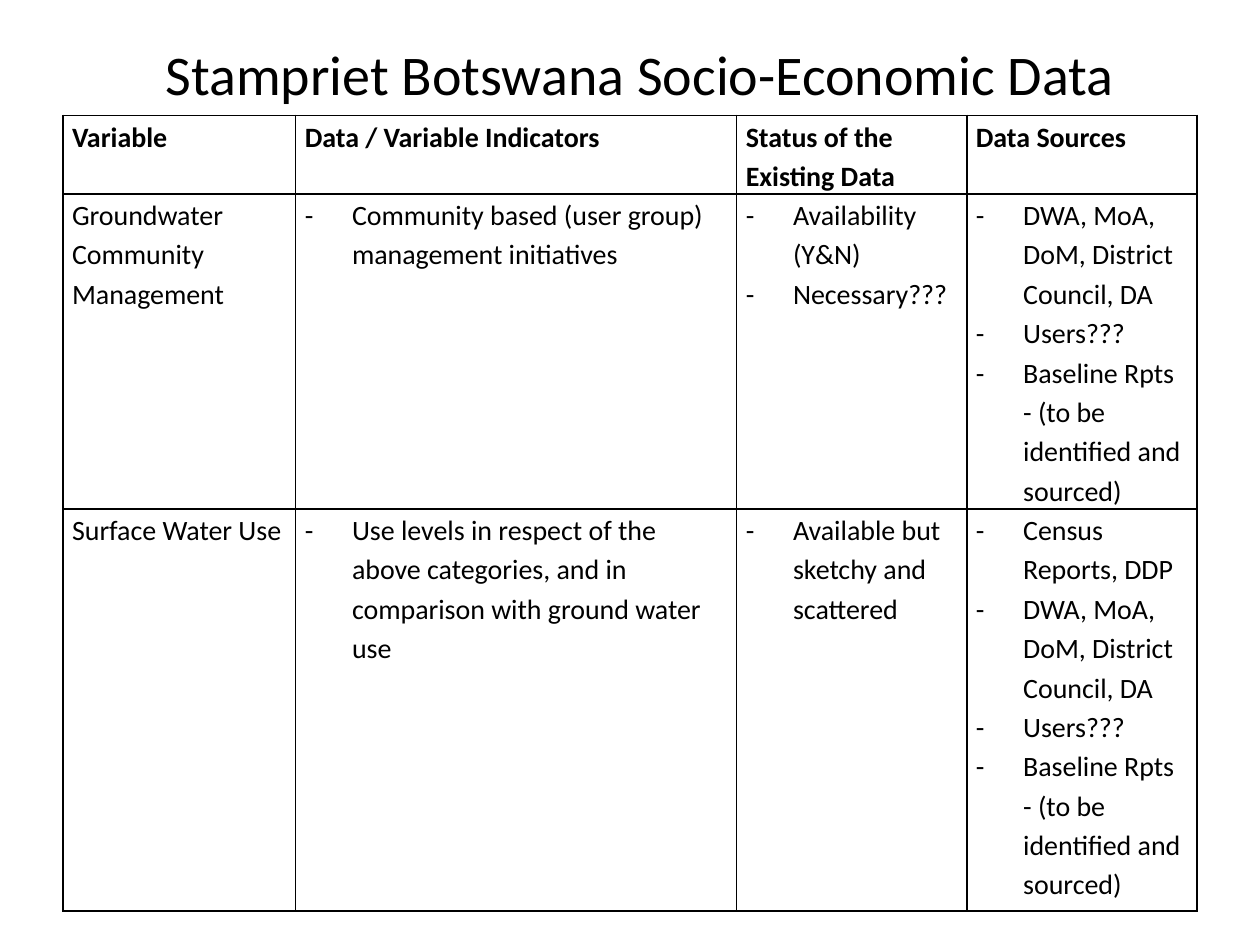
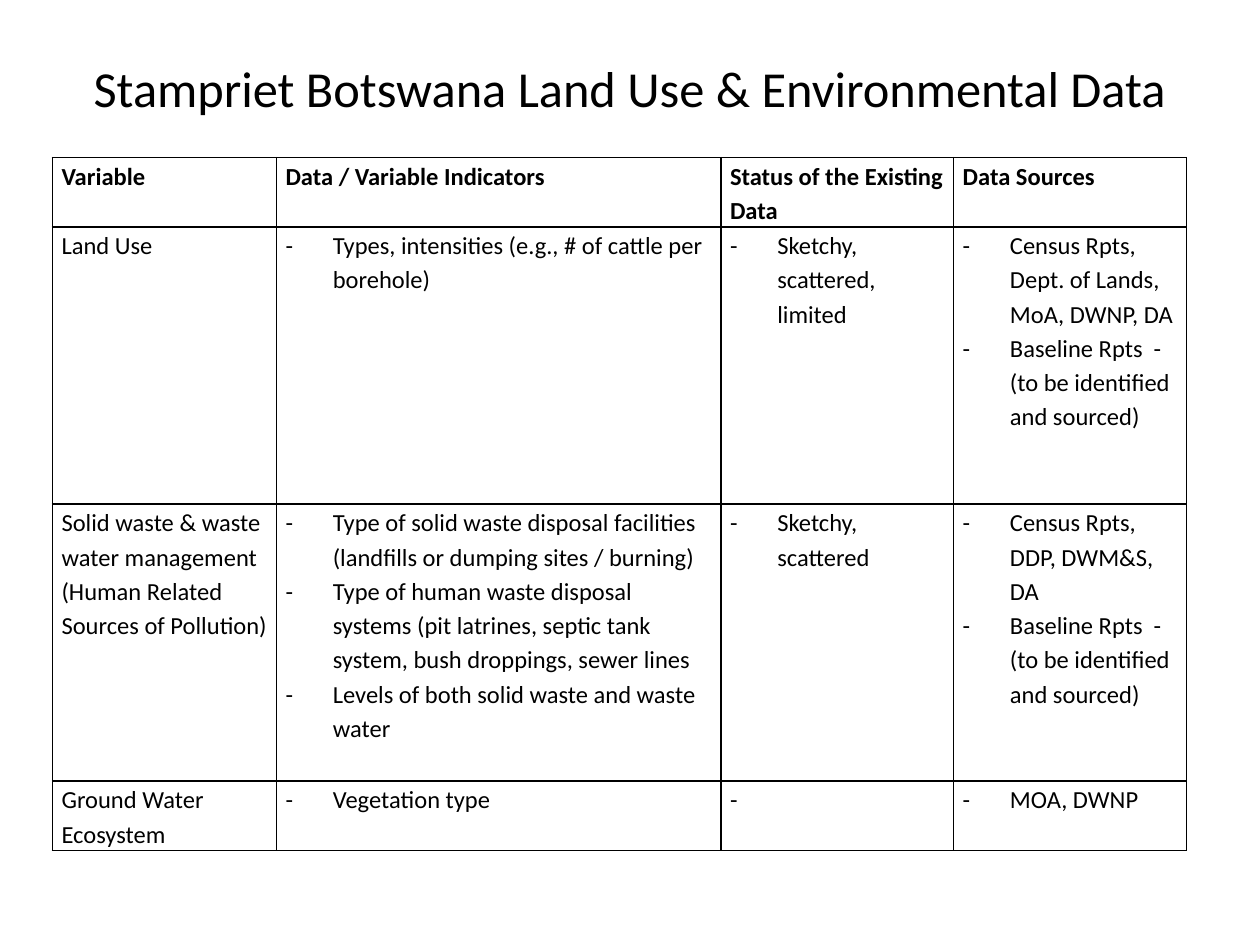
from lxml import etree
from pptx import Presentation
from pptx.dml.color import RGBColor
from pptx.enum.text import MSO_ANCHOR as Anchor, PP_ALIGN as Align
from pptx.oxml.ns import qn
from pptx.util import Pt

COLORS = {"text": "000000", "border": "000000"}
FONT = "Calibri"
BASELINE = "Baseline Rpts  - (to be identified and sourced)"
COUNCIL = "DWA, MoA, DoM, District Council, DA"
HEADER = ["Variable", "Data / Variable Indicators",
          "Status of the Existing Data", "Data Sources"]

SLIDES = [
    dict(
        title="Stampriet Botswana Socio-Economic Data",
        title_box=(41.8, 11.8, 648, 59.8), title_size=32,
        table_box=(36, 66, 648, 454.5), size=16,
        cols=[133, 252, 131.5, 131.5], heights=[44.8, 180, 229.7],
        rows=[
            [["Groundwater Community Management"],
             ["Community based (user group) management initiatives"],
             ["Availability (Y&N)", "Necessary???"],
             [COUNCIL, "Users???", BASELINE]],
            [["Surface Water Use"],
             ["Use levels in respect of the above categories, "
              "and in comparison with ground water use"],
             ["Available but sketchy and scattered"],
             ["Census Reports, DDP", COUNCIL, "Users???", BASELINE]],
        ],
    ),
    dict(
        title="Stampriet Botswana Land Use & Environmental Data",
        title_box=(36, 21.6, 648, 56.2), title_size=28.8,
        table_box=(30, 90, 648, 396), size=14,
        cols=[128, 254, 133, 133], heights=[39.6, 158.4, 158.4, 39.6],
        rows=[
            [["Land Use"],
             ["Types, intensities (e.g., # of cattle per borehole)"],
             ["Sketchy, scattered, limited"],
             ["Census Rpts, Dept. of Lands, MoA, DWNP, DA", BASELINE]],
            [["Solid waste & waste water management",
              "(Human Related Sources of Pollution)"],
             ["Type of solid waste disposal facilities "
              "(landfills or dumping sites / burning)",
              "Type of human waste disposal systems (pit latrines, "
              "septic tank system, bush droppings, sewer lines",
              "Levels of both solid waste and waste water"],
             ["Sketchy, scattered"],
             ["Census Rpts, DDP, DWM&S, DA", BASELINE]],
            [["Ground Water Ecosystem"], ["Vegetation type"], ["-"],
             ["MOA, DWNP"]],
        ],
    ),
]


def write_text(tf, lines, size, bold=False, align=Align.LEFT,
               spacing=1.0, bullet=False):
    tf.word_wrap = True
    for i, line in enumerate(lines):
        p = tf.add_paragraph() if i else tf.paragraphs[0]
        p.alignment, p.line_spacing = align, spacing
        p.font.size = Pt(size)
        if bullet:
            pPr = p._p.get_or_add_pPr()
            pPr.set("marL", str(Pt(27)))
            pPr.set("indent", str(-Pt(27)))
            bullet_font = etree.Element(qn("a:buFont"), typeface=FONT)
            bullet_char = etree.Element(qn("a:buChar"), char="-")
            pPr.find(qn("a:lnSpc")).addnext(bullet_font)
            bullet_font.addnext(bullet_char)
        r = p.add_run()
        r.text = line
        r.font.name, r.font.size, r.font.bold = FONT, Pt(size), bold
        r.font.color.rgb = RGBColor.from_string(COLORS["text"])


def add_borders(cell):
    tcPr = cell._tc.get_or_add_tcPr()
    for i, side in enumerate(("lnL", "lnR", "lnT", "lnB")):
        ln = etree.Element(qn(f"a:{side}"), w=str(Pt(1)))
        fill = etree.SubElement(ln, qn("a:solidFill"))
        etree.SubElement(fill, qn("a:srgbClr"), val=COLORS["border"])
        tcPr.insert(i, ln)


def add_title(s, box, text, size):
    tf = s.shapes.add_textbox(*map(Pt, box)).text_frame
    tf.vertical_anchor = Anchor.MIDDLE
    write_text(tf, [text], size, align=Align.CENTER)


def add_data_table(s, box, cols, heights, rows, size):
    table = s.shapes.add_table(len(heights), len(cols), *map(Pt, box)).table
    table.first_row = table.horz_banding = False
    for col, width in zip(table.columns, cols):
        col.width = Pt(width)
    for row, height in zip(table.rows, heights):
        row.height = Pt(height)
    for i, row in enumerate([[[name] for name in HEADER]] + rows):
        for j, lines in enumerate(row):
            cell = table.cell(i, j)
            cell.margin_left = cell.margin_right = Pt(5.2)
            cell.margin_top = cell.margin_bottom = 0
            cell.fill.background()
            add_borders(cell)
            write_text(cell.text_frame, lines, size, bold=i == 0, spacing=1.15,
                       bullet=i > 0 and j > 0 and lines != ["-"])


def add_data_slide(prs, data):
    s = prs.slides.add_slide(prs.slide_layouts[6])
    add_title(s, data["title_box"], data["title"], data["title_size"])
    add_data_table(s, data["table_box"], data["cols"], data["heights"],
                   data["rows"], data["size"])


def main():
    prs = Presentation()
    prs.slide_width, prs.slide_height = Pt(720), Pt(540)
    for data in SLIDES:
        add_data_slide(prs, data)
    prs.save("out.pptx")


if __name__ == "__main__":
    main()
